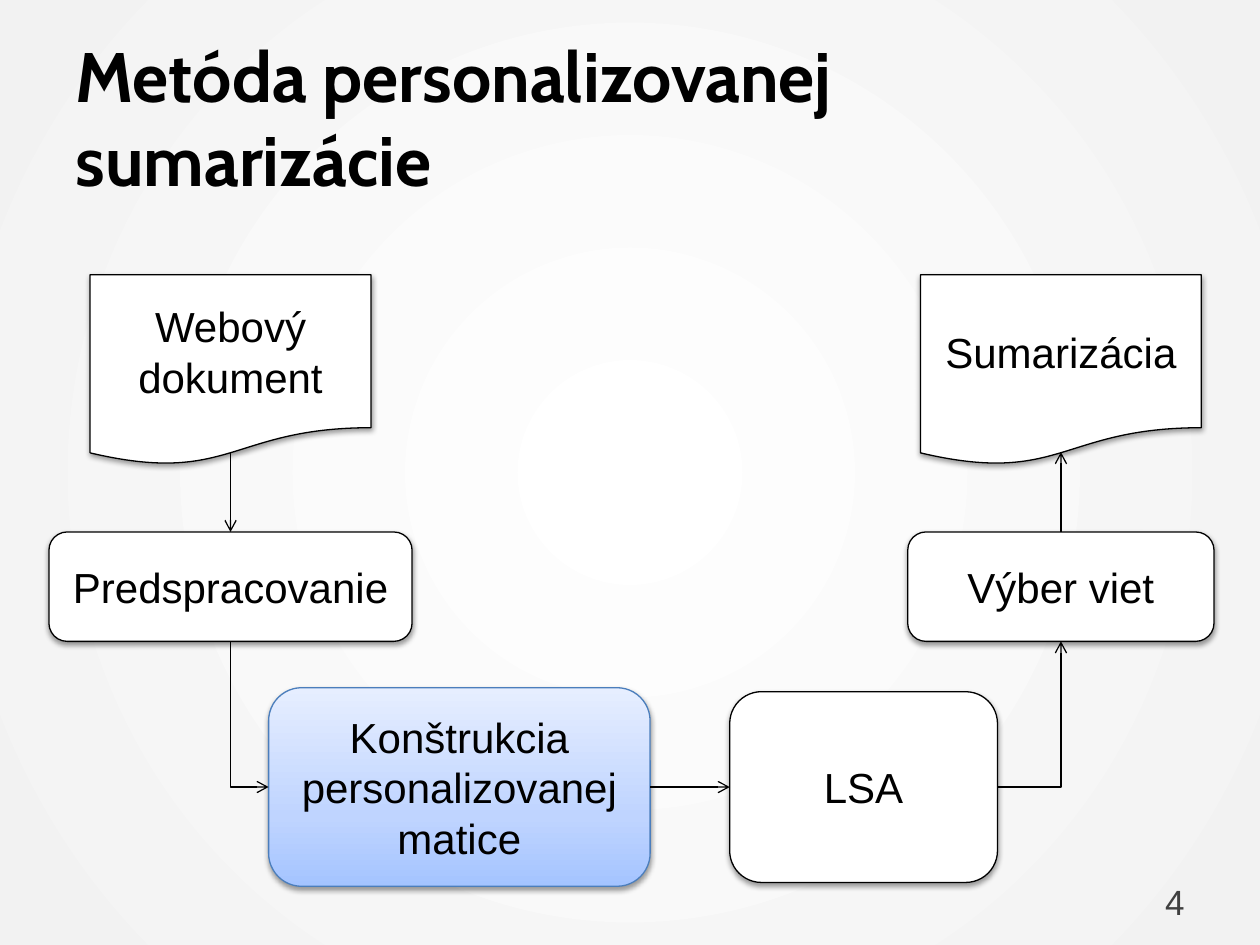
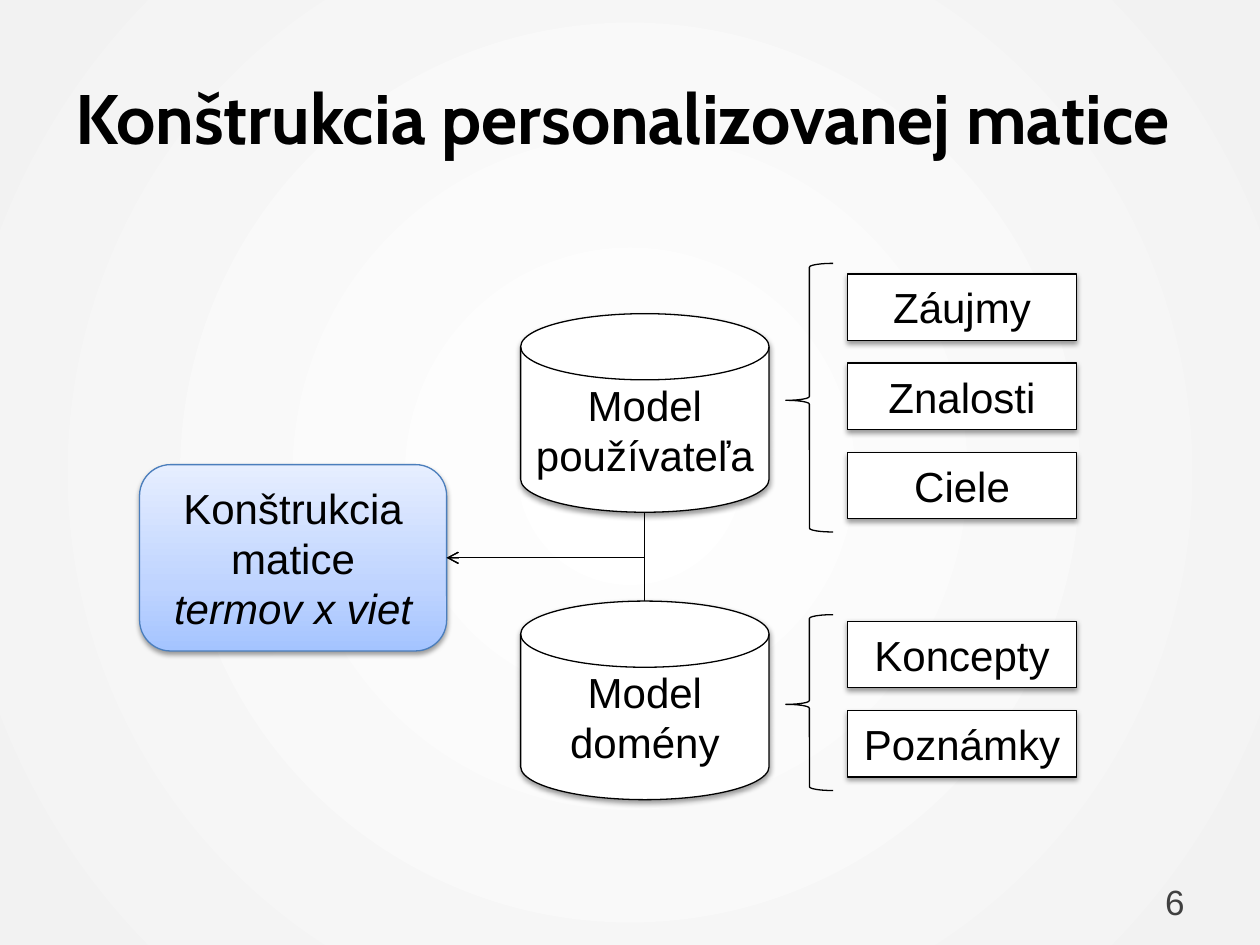
from lxml.etree import SubElement
from pptx import Presentation
from pptx.dml.color import RGBColor
from pptx.enum.shapes import MSO_CONNECTOR, MSO_SHAPE
from pptx.enum.text import MSO_ANCHOR, MSO_AUTO_SIZE, PP_ALIGN
from pptx.oxml import parse_xml
from pptx.oxml.ns import nsdecls, qn
from pptx.util import Pt

COLORS = {
    "text": "000000", "line": "000000", "fill": "FFFFFF", "number": "404040",
    "accent_line": "4B7EBC", "bg_center": "FFFFFF", "bg_edge": "F2F2F2",
    "accent_low": "A4C4FF", "accent_mid": "BFD4FF", "accent_high": "E6EEFF",
}
TITLE_FONT, BODY_FONT = "Cabin", "Arial"
TOP, LEFT, BOTTOM, RIGHT = range(4)
ROUND, RECT = MSO_SHAPE.ROUNDED_RECTANGLE, MSO_SHAPE.RECTANGLE
DOC, DISK = MSO_SHAPE.FLOWCHART_DOCUMENT, MSO_SHAPE.FLOWCHART_MAGNETIC_DISK
DOC_BOTTOM = 0.93  # where the wave of a document crosses its middle

# Nodes: name: (shape, centre x, centre y, width, height, paragraphs, accent)
# A paragraph is (text, italic).
LEFT_X, RIGHT_X, STEP_Y, MATRIX_Y = 131.75, 606.25, 335.25, 449.75
METHOD = {
    "title": "Metóda personalizovanej sumarizácie",
    "number": "4",
    "nodes": {
        "document": (DOC, LEFT_X, 211.5, 160.5, 109, [("Webový dokument", False)], False),
        "preprocess": (ROUND, LEFT_X, STEP_Y, 207.5, 62.5, [("Predspracovanie", False)], False),
        "matrix": (ROUND, 262.5, MATRIX_Y, 218, 113.5,
                   [("Konštrukcia personalizovanej matice", False)], True),
        "lsa": (ROUND, 493.5, MATRIX_Y, 153, 109, [("LSA", False)], False),
        "selection": (ROUND, RIGHT_X, STEP_Y, 175, 62.5, [("Výber viet", False)], False),
        "summary": (DOC, RIGHT_X, 211.5, 160.5, 109, [("Sumarizácia", False)], False),
    },
    # Links: (from, side, to, side, bent, end that carries the arrowhead)
    "links": [
        ("document", BOTTOM, "preprocess", TOP, False, "tailEnd"),
        ("matrix", LEFT, "preprocess", BOTTOM, True, "headEnd"),
        ("matrix", RIGHT, "lsa", LEFT, False, "tailEnd"),
        ("lsa", RIGHT, "selection", BOTTOM, True, "tailEnd"),
        ("selection", TOP, "summary", BOTTOM, False, "tailEnd"),
    ],
    "groups": [],
}
DISK_X = 368.5
MATRIX = {
    "title": "Konštrukcia personalizovanej matice",
    "number": "6",
    "nodes": {
        "matrix": (ROUND, 167.5, 318.75, 175.5, 106.5,
                   [("Konštrukcia matice", False), ("termov x viet", True)], True),
        "user": (DISK, DISK_X, 236, 142, 113.5, [("Model používateľa", False)], False),
        "domain": (DISK, DISK_X, 400.25, 142, 113.5, [("Model domény", False)], False),
    },
    "links": [
        ("matrix", RIGHT, "domain", TOP, True, "headEnd"),
        ("matrix", RIGHT, "user", BOTTOM, True, "headEnd"),
    ],
    # Groups: (top of first label, labels, brace top, brace height)
    "groups": [
        (156.5, ["Záujmy", "Znalosti", "Ciele"], 150.5, 153.5),
        (355, ["Koncepty", "Poznámky"], 351.25, 100.5),
    ],
}
LABEL_X, LABEL_W, LABEL_H, LABEL_PITCH = 549.75, 130.5, 38, 51
BRACE_LEFT, BRACE_W = 449, 27


def rgb(name):
    return RGBColor.from_string(COLORS[name])


def gradient(stops, direction):
    gs = "".join(f'<a:gs pos="{pos * 1000}"><a:srgbClr val="{COLORS[name]}"/></a:gs>'
                 for pos, name in stops)
    return (f'<a:gradFill {nsdecls("a")} rotWithShape="1">'
            f'<a:gsLst>{gs}</a:gsLst>{direction}</a:gradFill>')


def set_background(master):
    fill = gradient([(0, "bg_center"), (100, "bg_edge")],
                    '<a:path path="circle">'
                    '<a:fillToRect l="50000" t="50000" r="50000" b="50000"/></a:path>')
    c_sld = master._element.cSld
    old = c_sld.find(qn("p:bg"))
    if old is not None:
        c_sld.remove(old)
    c_sld.insert(0, parse_xml(f'<p:bg {nsdecls("p")}><p:bgPr>{fill}'
                              f'<a:effectLst {nsdecls("a")}/></p:bgPr></p:bg>'))


def write(p, text, size, color="text", font=BODY_FONT, align=PP_ALIGN.CENTER,
          bold=False, italic=False):
    p.alignment = align
    r = p.add_run()
    r.text = text
    f = r.font
    f.name, f.size, f.bold, f.italic = font, Pt(size), bold, italic
    f.color.rgb = rgb(color)


def frame(sp):
    tf = sp.text_frame
    tf.word_wrap = True
    tf.auto_size = MSO_AUTO_SIZE.NONE
    tf.vertical_anchor = MSO_ANCHOR.MIDDLE
    return tf


def outline(sp, color="line"):
    sp.line.color.rgb = rgb(color)
    sp.line.width = Pt(0.75)


def add_shadow(sp):
    sp.shadow.inherit = False
    sp._element.spPr.find(qn("a:effectLst")).append(parse_xml(
        f'<a:outerShdw {nsdecls("a")} blurRad="{Pt(3.1)}" dist="{Pt(1.6)}" dir="5400000" '
        'rotWithShape="0"><a:srgbClr val="000000"><a:alpha val="38000"/></a:srgbClr>'
        '</a:outerShdw>'))


def add_node(s, shape, cx, cy, w, h, paragraphs, accent=False):
    sp = s.shapes.add_shape(shape, Pt(cx - w / 2), Pt(cy - h / 2), Pt(w), Pt(h))
    if accent:
        sp.fill.background()
        sp_pr = sp._element.spPr
        sp_pr.replace(sp_pr.find(qn("a:noFill")), parse_xml(gradient(
            [(0, "accent_low"), (35, "accent_mid"), (100, "accent_high")],
            '<a:lin ang="16200000" scaled="0"/>')))
    else:
        sp.fill.solid()
        sp.fill.fore_color.rgb = rgb("fill")
    outline(sp, "accent_line" if accent else "line")
    add_shadow(sp)
    tf = frame(sp)
    for i, (text, italic) in enumerate(paragraphs):
        p = tf.add_paragraph() if i else tf.paragraphs[0]
        write(p, text, 24, italic=italic)
    return sp


def side_point(node, side):
    shape, cx, cy, w, h = node[:5]
    bottom = cy - h / 2 + h * (DOC_BOTTOM if shape == DOC else 1)
    return [(cx, cy - h / 2), (cx - w / 2, cy), (cx, bottom), (cx + w / 2, cy)][side]


def add_link(s, nodes, shapes, start, start_side, end, end_side, bent, arrow_end):
    """Draw a link; a bent one leaves its start horizontally and turns once."""
    x1, y1 = side_point(nodes[start], start_side)
    x2, y2 = side_point(nodes[end], end_side)
    kind = MSO_CONNECTOR.ELBOW if bent else MSO_CONNECTOR.STRAIGHT
    c = s.shapes.add_connector(kind, Pt(x1), Pt(y1), Pt(x2), Pt(y2))
    if nodes[start][0] == ROUND:
        c.begin_connect(shapes[start], start_side)
    if nodes[end][0] == ROUND:
        c.end_connect(shapes[end], end_side)
    outline(c)
    sp_pr = c._element.spPr
    if bent:
        sp_pr.find(qn("a:prstGeom")).set("prst", "bentConnector2")
    SubElement(c.line._get_or_add_ln(), qn(f"a:{arrow_end}")).set("type", "arrow")
    SubElement(sp_pr, qn("a:effectLst"))


def add_group(s, top, labels, brace_top, brace_height):
    brace = s.shapes.add_shape(MSO_SHAPE.LEFT_BRACE, Pt(BRACE_LEFT), Pt(brace_top),
                               Pt(BRACE_W), Pt(brace_height))
    brace.adjustments[0], brace.adjustments[1] = 0.08, 0.51
    brace.fill.background()
    brace.shadow.inherit = False
    outline(brace)
    for i, label in enumerate(labels):
        cy = top + LABEL_H / 2 + i * LABEL_PITCH
        add_node(s, RECT, LABEL_X, cy, LABEL_W, LABEL_H, [(label, False)])


def add_slide(prs, content):
    s = prs.slides.add_slide(prs.slide_layouts[5])
    title = s.shapes.title
    title.left, title.top, title.width, title.height = Pt(36), Pt(21.5), Pt(648), Pt(90)
    write(frame(title).paragraphs[0], content["title"], 40, font=TITLE_FONT,
          align=PP_ALIGN.LEFT, bold=True)
    nodes = content["nodes"]
    shapes = {name: add_node(s, *node) for name, node in nodes.items()}
    for link in content["links"]:
        add_link(s, nodes, shapes, *link)
    for group in content["groups"]:
        add_group(s, *group)
    number = s.shapes.add_textbox(Pt(516), Pt(500.5), Pt(168), Pt(29))
    write(frame(number).paragraphs[0], content["number"], 20, "number", align=PP_ALIGN.RIGHT)


def main():
    prs = Presentation()
    prs.slide_width, prs.slide_height = Pt(720), Pt(540)
    set_background(prs.slide_master)
    for content in (METHOD, MATRIX):
        add_slide(prs, content)
    prs.save("out.pptx")


if __name__ == "__main__":
    main()
